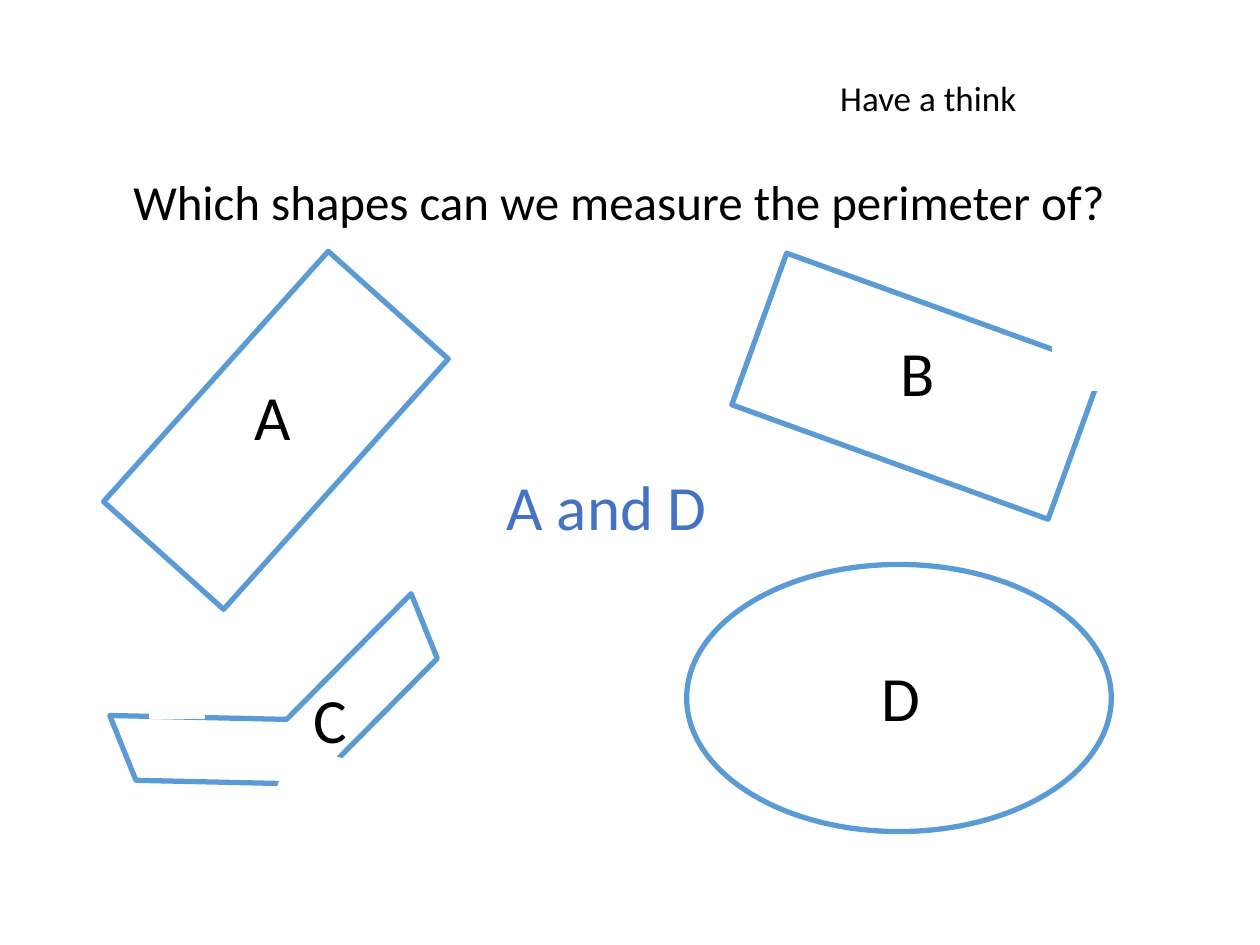
import pptx
import pptx.dml.color
import pptx.enum.shapes
import pptx.enum.text
import pptx.util

Inches = pptx.util.Inches
Pt = pptx.util.Pt
PRESET = pptx.enum.shapes.MSO_SHAPE
OUTLINE = "5B9BD5"
PAPER = "FFFFFF"


def colour(hex_value):
    return pptx.dml.color.RGBColor.from_string(hex_value)


def add_figure(slide, preset, box, rotation=0, line=OUTLINE, weight=3, fill=None):
    figure = slide.shapes.add_shape(preset, *map(Inches, box))
    figure.rotation = rotation
    figure.shadow.inherit = False
    if fill:
        figure.fill.solid()
        figure.fill.fore_color.rgb = colour(fill)
    else:
        figure.fill.background()
    figure.line.color.rgb = colour(line)
    figure.line.width = Pt(weight)


def add_gap(slide, left, top, size=(0.43, 0.76), rotation=0):
    add_figure(slide, PRESET.RECTANGLE, (left, top, *size), rotation,
               line=PAPER, weight=1, fill=PAPER)


def add_text(slide, text, box, size=36, ink="000000", wrap=False):
    label = slide.shapes.add_textbox(*map(Inches, box))
    frame = label.text_frame
    frame.word_wrap = wrap
    frame.auto_size = pptx.enum.text.MSO_AUTO_SIZE.SHAPE_TO_FIT_TEXT
    run = frame.paragraphs[0].add_run()
    run.text = text
    run.font.name = "Calibri"
    run.font.size = Pt(size)
    run.font.color.rgb = colour(ink)


def main():
    deck = pptx.Presentation()
    deck.slide_width, deck.slide_height = Inches(10), Inches(7.5)
    slide = deck.slides.add_slide(deck.slide_layouts[6])
    wide_gap = {"size": (0.85, 0.76), "rotation": 18.8}

    add_figure(slide, PRESET.RECTANGLE, (1.55, 2.08, 1.28, 2.67), 41.9)
    add_text(slide, "A", (1.92, 2.95, 0.49, 0.71))

    add_figure(slide, PRESET.RECTANGLE, (6.64, 1.73, 1.28, 2.67), 109.9)
    add_gap(slide, 7.95, 1.92, **wide_gap)
    add_text(slide, "B", (7.05, 2.6, 0.48, 0.71))

    add_figure(slide, PRESET.OVAL, (5.45, 4.48, 3.37, 2.12))
    add_text(slide, "D", (6.9, 5.18, 0.51, 0.71))

    add_figure(slide, PRESET.CHEVRON, (1.72, 4.42, 1.11, 2.58), 68)
    add_gap(slide, 2.18, 6.01, **wide_gap)
    add_gap(slide, 1.19, 4.94)
    add_text(slide, "C", (2.39, 5.35, 0.47, 0.71))

    add_text(slide, "Which shapes can we measure the perimeter of?",
             (0.96, 1.31, 8, 0.57), size=28)
    add_text(slide, "A and D", (3.92, 3.66, 1.8, 0.71), ink="4472C4")
    add_text(slide, "Have a think", (6.57, 0.56, 1.65, 0.44), size=20, wrap=True)
    add_gap(slide, 8.36, 2.34)

    deck.save("out.pptx")


if __name__ == "__main__":
    main()
